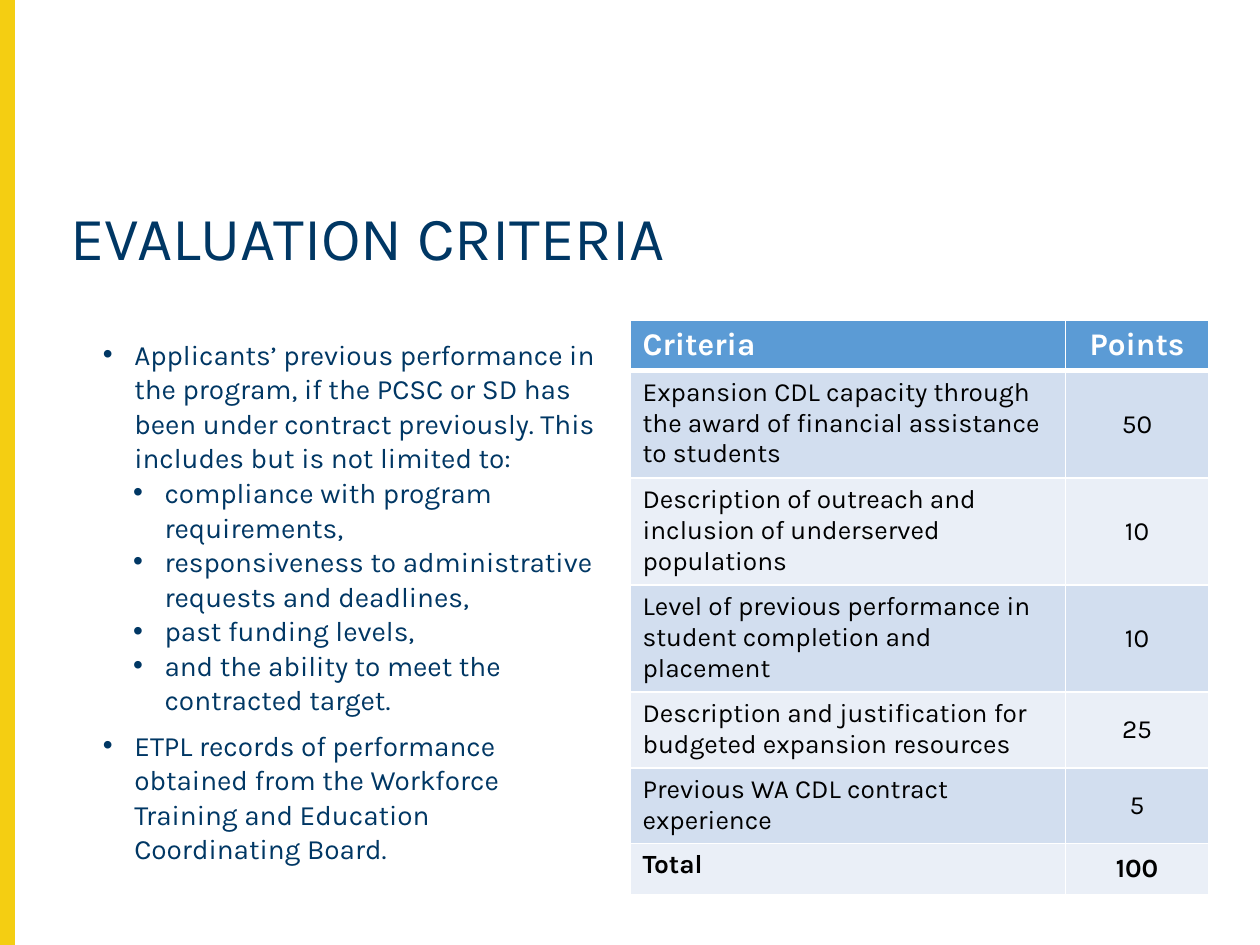
"""Build the evaluation criteria slide with its bullet list and points table."""
from lxml import etree
from pptx import Presentation, util as u
from pptx.dml.color import RGBColor
from pptx.enum import shapes, text
from pptx.oxml.ns import qn

FONT = "Karla"
COLORS = {
    "navy": "003764", "yellow": "F4CE12", "white": "FFFFFF", "black": "000000",
    "header": "5B9BD5", "dark_band": "D2DEEF", "light_band": "EAEFF7",
}
BULLETS = [
    (0, "Applicants’ previous performance in the program, if the PCSC or SD has "
        "been under contract previously. This includes but is not limited to:"),
    (1, "compliance with program requirements,"),
    (1, "responsiveness to administrative requests and deadlines,"),
    (1, "past funding levels,"),
    (1, "and the ability to meet the contracted target."),
    (0, "ETPL records of performance obtained from the Workforce Training and "
        "Education Coordinating Board."),
]
ROWS = [
    ("Criteria", "Points"),
    ("Expansion CDL capacity through the award of financial assistance to students", "50"),
    ("Description of outreach and inclusion of underserved populations", "10"),
    ("Level of previous performance in student completion and placement", "10"),
    ("Description and justification for budgeted expansion resources", "25"),
    ("Previous WA CDL contract experience", "5"),
    ("Total", "100"),
]


def rgb(name):
    """Return the named colour."""
    return RGBColor.from_string(COLORS[name])


def add_run(p, content, size, color, bold=False):
    """Add one formatted run to a paragraph."""
    r = p.add_run()
    r.text = content
    r.font.name = FONT
    r.font.size = u.Pt(size)
    r.font.bold = bold
    r.font.color.rgb = rgb(color)


def add_bar(s):
    """Add the yellow bar along the left edge."""
    sp = s.shapes.add_shape(shapes.MSO_SHAPE.RECTANGLE, 0, 0, u.Pt(8), u.Pt(540))
    sp.shadow.inherit = False
    sp.fill.solid()
    sp.fill.fore_color.rgb = rgb("yellow")
    sp.line.color.rgb = rgb("yellow")
    sp.line.width = u.Pt(1)


def add_text_frame(s, *box):
    """Add a wrapping text box and return its text frame."""
    tf = s.shapes.add_textbox(*map(u.Pt, box)).text_frame
    tf.word_wrap = True
    return tf


def add_title(s, content):
    """Add the slide title."""
    p = add_text_frame(s, 33, 115.2, 672, 57).paragraphs[0]
    p.line_spacing = 0.9
    add_run(p, content, 35, "navy")


def set_bullet(p, indent):
    """Give a paragraph a hanging round bullet."""
    pPr = p._p.get_or_add_pPr()
    pPr.set("marL", str(u.Pt(indent)))
    pPr.set("indent", str(u.Pt(-18)))
    etree.SubElement(pPr, qn("a:buFont")).set("typeface", "Arial")
    etree.SubElement(pPr, qn("a:buChar")).set("char", "•")


def add_bullets(s, items):
    """Add the two-level bullet list."""
    tf = add_text_frame(s, 33, 188.6, 316, 312.5)
    for i, (level, content) in enumerate(items):
        p = tf.add_paragraph() if i else tf.paragraphs[0]
        set_bullet(p, 54 if level else 36.7)
        p.line_spacing = 1.03
        p.space_before = u.Pt(6 if i and not level else 0)
        add_run(p, content, 16, "navy")


def set_borders(cell, bottom):
    """Draw white borders around a cell."""
    tcPr = cell._tc.get_or_add_tcPr()
    for i, (side, width) in enumerate([("L", 1), ("R", 1), ("T", 1), ("B", bottom)]):
        ln = etree.Element(qn(f"a:ln{side}"), w=str(u.Pt(width)))
        fill = etree.SubElement(ln, qn("a:solidFill"))
        etree.SubElement(fill, qn("a:srgbClr"), val=COLORS["white"])
        tcPr.insert(i, ln)


def fill_cell(cell, content, row, col):
    """Write and format one table cell."""
    header = row == 0
    cell.fill.solid()
    band = "dark_band" if row % 2 else "light_band"
    cell.fill.fore_color.rgb = rgb("header" if header else band)
    set_borders(cell, 3 if header else 1)
    p = cell.text_frame.paragraphs[0]
    if col:
        p.alignment = text.PP_ALIGN.CENTER
        if not header:
            cell.vertical_anchor = text.MSO_ANCHOR.MIDDLE
    add_run(p, content, 18 if header else 15, "white" if header else "black",
            header or row == len(ROWS) - 1)


def add_points_table(s, rows):
    """Add the table of criteria and points."""
    box = map(u.Pt, (360, 183, 330.5, 199.5))
    table = s.shapes.add_table(len(rows), 2, *box).table
    for column, width in zip(table.columns, (249, 81.5)):
        column.width = u.Pt(width)
    for i, values in enumerate(rows):
        table.rows[i].height = u.Pt(29.5 if i else 22.5)
        for j, value in enumerate(values):
            fill_cell(table.cell(i, j), value, i, j)


def main():
    """Build and save the slide."""
    prs = Presentation()
    prs.slide_width, prs.slide_height = u.Pt(720), u.Pt(540)
    s = prs.slides.add_slide(prs.slide_layouts[6])
    add_bar(s)
    add_title(s, "EVALUATION CRITERIA")
    add_bullets(s, BULLETS)
    add_points_table(s, ROWS)
    prs.save("out.pptx")


if __name__ == "__main__":
    main()
